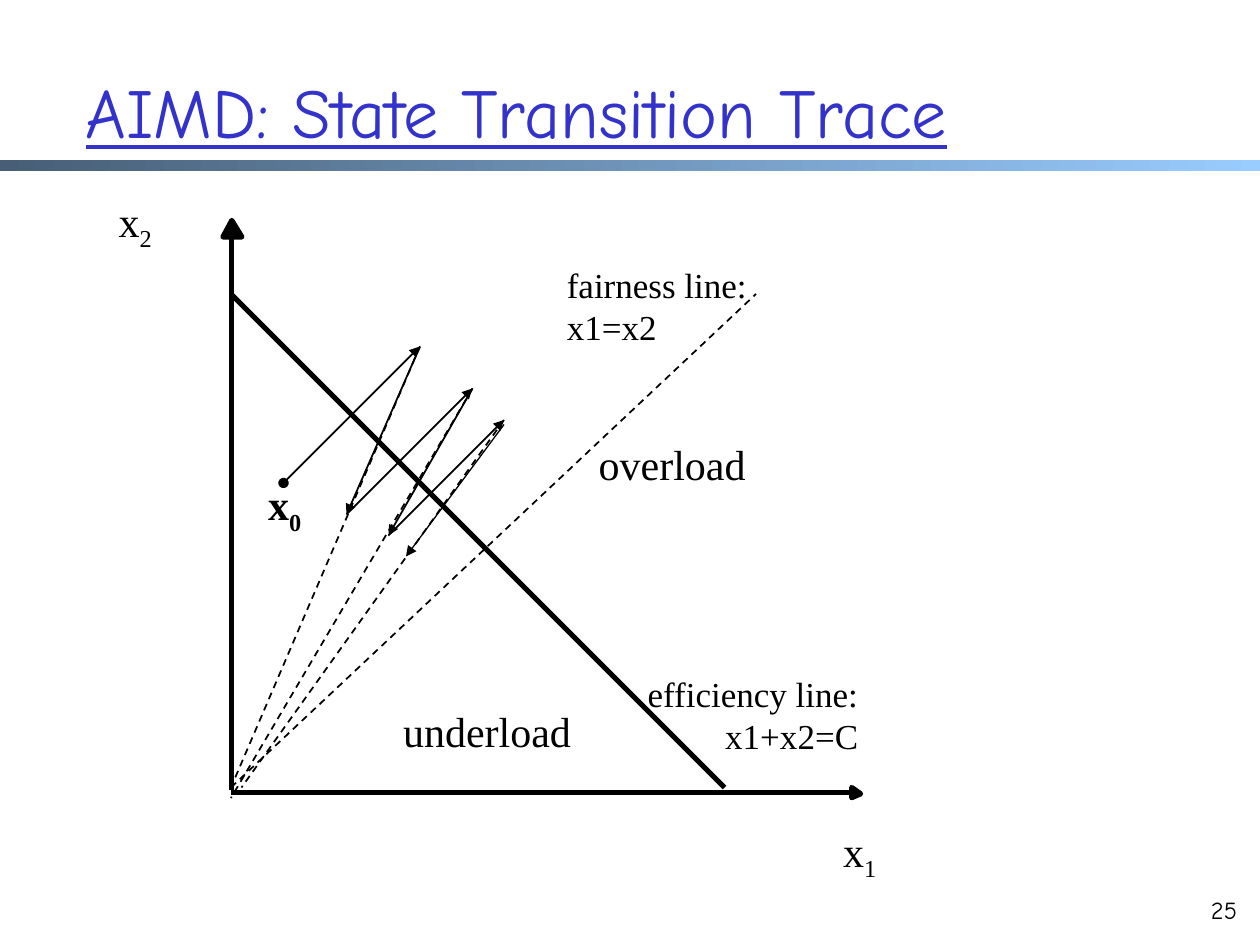
from lxml.etree import SubElement
from pptx import Presentation
from pptx.dml.color import RGBColor
from pptx.enum.dml import MSO_LINE
from pptx.enum.shapes import MSO_CONNECTOR, MSO_SHAPE
from pptx.enum.text import MSO_ANCHOR, PP_ALIGN
from pptx.oxml.ns import qn
from pptx.util import Pt

COLORS = {"title": "3333CC", "ink": "000000", "bar_start": "475E76", "bar_end": "99CCFF"}
SERIF = "Times New Roman"
COMIC = "Comic Neue"


def color(name):
    """Return the named palette colour."""
    return RGBColor.from_string(COLORS[name])


def add_run(paragraph, text, size, font, ink="ink", bold=False, underline=False, baseline=None):
    """Append one formatted run to a paragraph."""
    run = paragraph.add_run()
    run.text = text
    run.font.size = Pt(size)
    run.font.name = font
    run.font.bold = bold
    run.font.underline = underline
    run.font.color.rgb = color(ink)
    if baseline is not None:
        run.font._element.set("baseline", str(baseline))


def add_text_box(slide, left, top, width, height, align, wrap=True):
    """Add a text box and return its text frame and first paragraph."""
    frame = slide.shapes.add_textbox(Pt(left), Pt(top), Pt(width), Pt(height)).text_frame
    frame.word_wrap = wrap
    frame.paragraphs[0].alignment = align
    return frame, frame.paragraphs[0]


def add_line(slide, start, end, weight=1, dashed=False, head=None, tail=None):
    """Draw a straight line with optional dashes and end marks."""
    line = slide.shapes.add_connector(MSO_CONNECTOR.STRAIGHT, *map(Pt, (*start, *end)))
    line.line.color.rgb = color("ink")
    line.line.width = Pt(weight)
    if dashed:
        line.line.dash_style = MSO_LINE.DASH
    properties = line._element.spPr
    outline = properties.find(qn("a:ln"))
    for tag, mark in (("a:headEnd", head), ("a:tailEnd", tail)):
        if mark:
            SubElement(outline, qn(tag), type=mark)
    SubElement(properties, qn("a:effectLst"))


def add_arrow_tip(slide, points):
    """Draw a filled triangular axis tip."""
    corners = [(Pt(x), Pt(y)) for x, y in points]
    builder = slide.shapes.build_freeform(*corners[0])
    builder.add_line_segments(corners[1:], close=True)
    shape = builder.convert_to_shape()
    shape.shadow.inherit = False
    shape.fill.solid()
    shape.fill.fore_color.rgb = color("ink")
    shape.line.color.rgb = color("ink")
    shape.line.width = Pt(3)


def add_header(slide, left, top, width, height):
    """Place the underlined title and the gradient bar below it."""
    bar = slide.shapes.add_shape(MSO_SHAPE.RECTANGLE, Pt(left), Pt(top + height - 6), Pt(width), Pt(6))
    bar.shadow.inherit = False
    bar.line.fill.background()
    bar.fill.gradient()
    bar.fill.gradient_angle = 0
    for stop, name in zip(bar.fill.gradient_stops, ("bar_start", "bar_end")):
        stop.color.rgb = color(name)
    frame, paragraph = add_text_box(slide, left + 42, top + 18, 612, 90, PP_ALIGN.LEFT)
    frame.vertical_anchor = MSO_ANCHOR.MIDDLE
    add_run(paragraph, "AIMD: State Transition Trace", 40, COMIC, "title", underline=True)


def add_plot(slide, left, top):
    """Place the axes, state trace, reference lines and labels."""
    def at(x, y):
        return left + x, top + y

    origin = at(72, 342)
    add_line(slide, at(72, 345), at(428, 345), 3)
    add_arrow_tip(slide, [at(426.7, 347.8), at(431.8, 345.6), at(426.7, 342)])
    add_line(slide, at(72.5, 343.5), at(72.5, 24.5), 3)
    add_arrow_tip(slide, [at(78.2, 27.4), at(72.5, 18), at(67.4, 27.4)])

    rises = [((102, 168), (180, 90)), ((138, 186), (210, 114)), ((162, 198), (228, 132))]
    for index, (low, high) in enumerate(rises):
        add_line(slide, at(*low), at(*high), head=None if index else "oval", tail="triangle")
    cuts = [
        ((180, 90), (138, 186), (72, 342), 1),
        ((210, 114), (162, 198), (72, 348), 1),
        ((228, 134.6), (172, 210), (78, 342), 0.75),
    ]
    for (_, peak), (start, end, foot, weight) in zip(rises, cuts):
        add_line(slide, at(*peak), at(*foot), dashed=True)
        add_line(slide, at(*start), at(*end), weight, tail="triangle")
    add_line(slide, origin, at(372, 60), dashed=True)
    add_line(slide, at(72, 60), at(354, 342), 3)

    for x, y, subscript, bold in ((414, 360, "1", False), (0, 0, "2", False), (85.4, 162, "0", True)):
        _, paragraph = add_text_box(slide, *at(x, y), 34.5, 36, PP_ALIGN.CENTER, wrap=False)
        add_run(paragraph, "x", 24, SERIF, bold=bold)
        add_run(paragraph, subscript, 24, SERIF, bold=bold, baseline=-25000)
    for x, y, width, text in ((274.8, 139, 98.6, "overload"), (163.2, 291.6, 110.2, "underload")):
        _, paragraph = add_text_box(slide, *at(x, y), width, 36, PP_ALIGN.CENTER, wrap=False)
        add_run(paragraph, text, 24, SERIF)

    _, paragraph = add_text_box(slide, *at(256.8, 38.9), 147.6, 55.4, PP_ALIGN.LEFT)
    add_run(paragraph, "fairness line:", 20, SERIF)
    paragraph.add_line_break()
    add_run(paragraph, "x1=x2", 20, SERIF)
    _, paragraph = add_text_box(slide, *at(287, 272.9), 150.5, 55.4, PP_ALIGN.RIGHT)
    add_run(paragraph, "efficiency line: x1+x2=C", 20, SERIF)


def add_page_number(slide, left, top, width, height):
    """Place the page number."""
    _, paragraph = add_text_box(slide, left, top, width, height, PP_ALIGN.RIGHT)
    add_run(paragraph, "25", 14, COMIC)


def main():
    """Build and save the slide."""
    presentation = Presentation()
    presentation.slide_width = Pt(720)
    presentation.slide_height = Pt(540)
    slide = presentation.slides.add_slide(presentation.slide_layouts[6])
    add_header(slide, 0, 0, 720, 97.5)
    add_plot(slide, 60, 108)
    add_page_number(slide, 681, 507.6, 33, 27.4)
    presentation.save("out.pptx")


if __name__ == "__main__":
    main()
